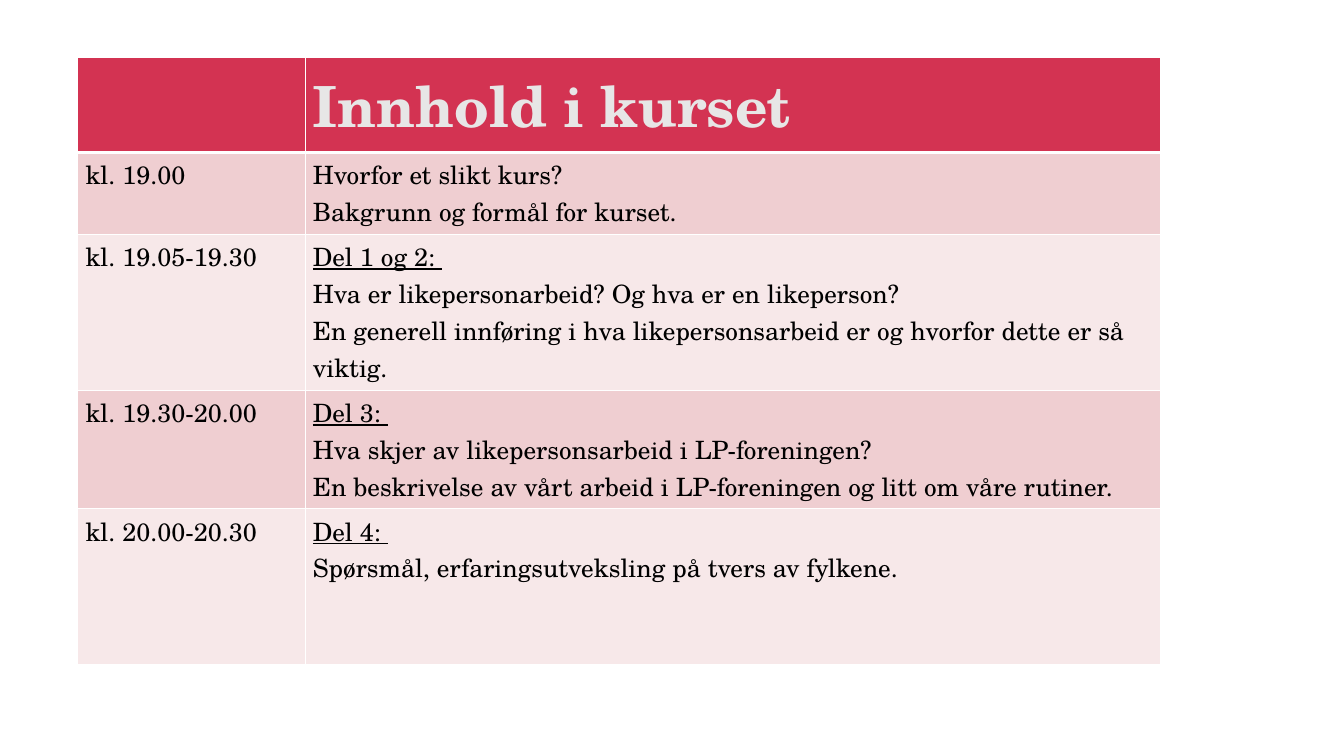
import pptx
import pptx.dml.color
import pptx.util
import pptx.oxml

FONT = "TeX Gyre Schola"
SLIDE_WIDTH, SLIDE_HEIGHT = 17.78, 10
HEADER_HEIGHT = 1.24
LINE_HEIGHT = 0.49
CELL_PADDING = 0.1
TIME_SHARE = 0.21
BANDS = ["EFCED1", "F7E8E9"]
SESSIONS = [
    ("kl. 19.00", "", ["Hvorfor et slikt kurs?", "Bakgrunn og formål for kurset."], 2),
    ("kl. 19.05-19.30", "Del 1 og 2: ", [
        "Hva er likepersonarbeid? Og hva er en likeperson?",
        "En generell innføring i hva likepersonsarbeid er og hvorfor dette er så viktig.",
    ], 4),
    ("kl. 19.30-20.00", "Del 3: ", [
        "Hva skjer av likepersonsarbeid i LP-foreningen?",
        "En beskrivelse av vårt arbeid i LP-foreningen og litt om våre rutiner.",
    ], 3),
    ("kl. 20.00-20.30", "Del 4: ", ["Spørsmål, erfaringsutveksling på tvers av fylkene."], 4),
]


def color(value):
    return pptx.dml.color.RGBColor.from_string(value)


def format_cell(cell, fill, bottom_width=1):
    properties = cell._tc.get_or_add_tcPr()
    for side, width in zip("LRTB", (1, 1, 1, bottom_width)):
        properties.append(pptx.oxml.parse_xml(
            f'<a:ln{side} xmlns:a="http://schemas.openxmlformats.org/drawingml/2006/main" '
            f'w="{pptx.util.Pt(width)}"><a:solidFill><a:srgbClr val="FFFFFF"/></a:solidFill></a:ln{side}>'
        ))
    cell.fill.solid()
    cell.fill.fore_color.rgb = color(fill)


def write_cell(cell, lines, heading="", size=24, text_color="000000", bold=False):
    paragraph = cell.text_frame.paragraphs[0]
    paragraph.font.name = FONT
    paragraph.font.size = pptx.util.Pt(size)
    paragraph.font.bold = bold
    paragraph.font.color.rgb = color(text_color)
    if heading:
        run = paragraph.add_run()
        run.text = heading
        run.font.underline = True
        paragraph.add_line_break()
    for index, line in enumerate(lines):
        if index:
            paragraph.add_line_break()
        paragraph.add_run().text = line


def add_agenda(slide, left, top, width):
    heights = [HEADER_HEIGHT] + [
        LINE_HEIGHT * line_count + CELL_PADDING for *_, line_count in SESSIONS
    ]
    box = [pptx.util.Inches(value) for value in (left, top, width, sum(heights))]
    table = slide.shapes.add_table(len(heights), 2, *box).table
    for column, share in zip(table.columns, (TIME_SHARE, 1 - TIME_SHARE)):
        column.width = pptx.util.Inches(width * share)
    for row, height in zip(table.rows, heights):
        row.height = pptx.util.Inches(height)

    for column in range(2):
        format_cell(table.cell(0, column), "D33352", bottom_width=3)
    write_cell(table.cell(0, 1), ["Innhold i kurset"], size=54, text_color="E7E6E6", bold=True)

    for row, (time, heading, lines, _) in enumerate(SESSIONS, start=1):
        for column in range(2):
            format_cell(table.cell(row, column), BANDS[(row - 1) % 2])
        write_cell(table.cell(row, 0), [time])
        write_cell(table.cell(row, 1), lines, heading)


def main():
    presentation = pptx.Presentation()
    presentation.slide_width = pptx.util.Inches(SLIDE_WIDTH)
    presentation.slide_height = pptx.util.Inches(SLIDE_HEIGHT)
    slide = presentation.slides.add_slide(presentation.slide_layouts[6])
    add_agenda(slide, SLIDE_WIDTH * 0.058, SLIDE_HEIGHT * 0.076, 14.32)
    presentation.save("out.pptx")


if __name__ == "__main__":
    main()
